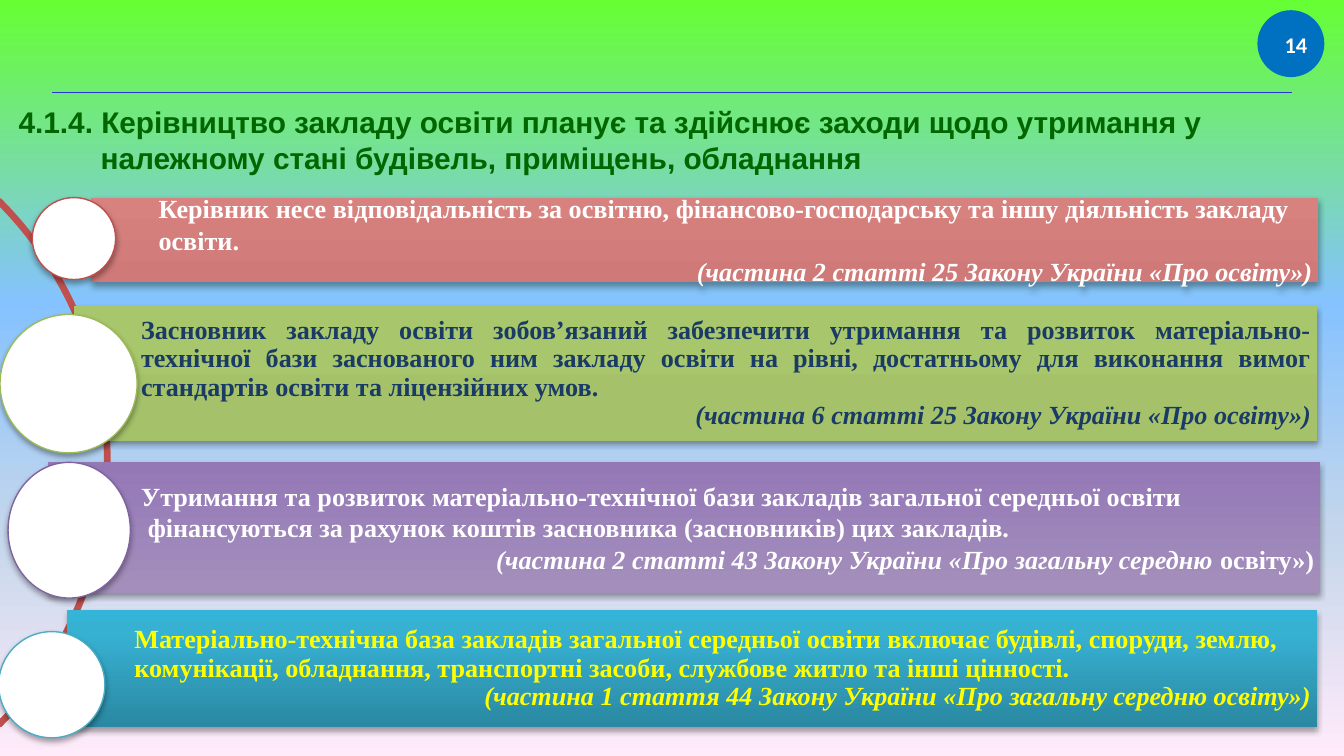
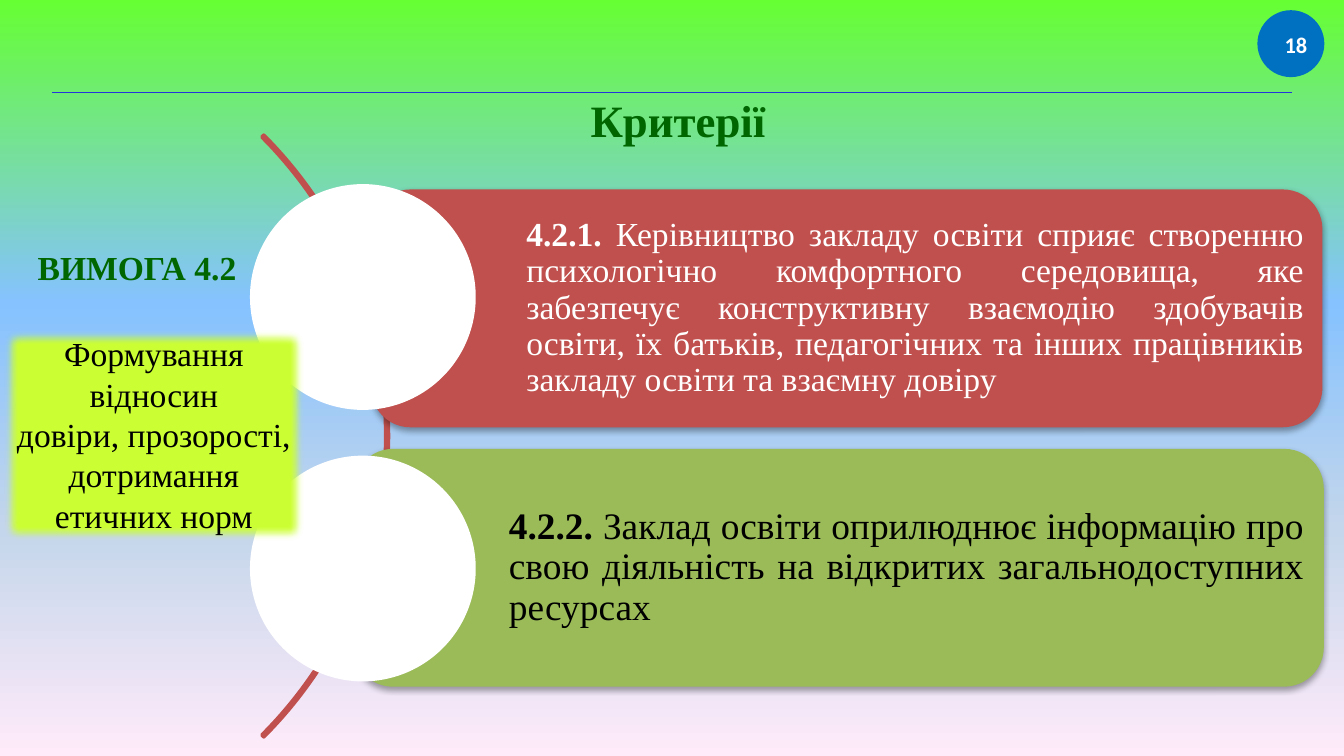
from dataclasses import dataclass

from lxml import etree
from pptx import Presentation
from pptx.dml.color import RGBColor
from pptx.enum.shapes import MSO_CONNECTOR, MSO_SHAPE
from pptx.enum.text import MSO_ANCHOR, MSO_AUTO_SIZE, PP_ALIGN
from pptx.oxml.ns import qn
from pptx.util import Emu, Pt

PX = 9144  # EMU in one px, 100 px to the inch
LEFT, CENTER, RIGHT, JUSTIFY = PP_ALIGN.LEFT, PP_ALIGN.CENTER, PP_ALIGN.RIGHT, PP_ALIGN.JUSTIFY
TOP, MIDDLE = MSO_ANCHOR.TOP, MSO_ANCHOR.MIDDLE
GROW = MSO_AUTO_SIZE.SHAPE_TO_FIT_TEXT
RECT, ROUNDED = MSO_SHAPE.RECTANGLE, MSO_SHAPE.ROUNDED_RECTANGLE
OVAL, ARC = MSO_SHAPE.OVAL, MSO_SHAPE.BLOCK_ARC
STRAIGHT = MSO_CONNECTOR.STRAIGHT

SERIF, SANS, NUMBER_FONT = "Times New Roman", "Arial", "Calibri"
WHITE, BLACK, YELLOW, NAVY = "FFFFFF", "000000", "FFFF00", "193B65"
HEADING, RED, GREEN, LIME = "006600", "C0504D", "9BBB59", "CCFF33"
BADGE, RULE = "0070C0", "2435DA"
SKY = [(0, "66FF33"), (40, "85C2FF"), (70, "C4D6EB"), (100, "FFEBFA")]


@dataclass
class Para:
    """A paragraph; a run is a string or a (string, bold, italic) triple."""
    runs: list
    align: int = LEFT
    italic: bool = False
    indent: int = 0


def rgb(value):
    return RGBColor.from_string(value)


def px(*lengths):
    return [Emu(length * PX) for length in lengths]


def add_xml(parent, tag, **attributes):
    return etree.SubElement(parent, qn(tag), attributes)


def paint_gradient(owner, fill, stops, angle):
    """Fill with any number of stops; the angle runs counter-clockwise."""
    fill.gradient()
    fill.gradient_angle = angle
    stop_list = owner._element.find(".//" + qn("a:gsLst"))
    for old in list(stop_list):
        stop_list.remove(old)
    for position, color in stops:
        stop = add_xml(stop_list, "a:gs", pos=str(position * 1000))
        add_xml(stop, "a:srgbClr", val=color)


class Deck:
    def __init__(self):
        self.prs = Presentation()
        self.prs.slide_width, self.prs.slide_height = Emu(1000 * PX), Emu(1125 * PX // 2)
        self.slide = None

    def new_slide(self, number):
        self.slide = self.prs.slides.add_slide(self.prs.slide_layouts[6])
        paint_gradient(self.slide, self.slide.background.fill, SKY, 270)
        self.rule(39, 69, 961)
        self.shape(OVAL, (937, 9, 47, 47), BADGE, (BADGE, 2))
        self.label((946, 18, 37, 30), [Para([number])], 12, WHITE,
                   font=NUMBER_FONT, bold=True, wrap=False)

    def rule(self, left, y, right):
        line = self.slide.shapes.add_connector(STRAIGHT, *px(left, y, right, y))
        line.line.color.rgb = rgb(RULE)
        line.line.width = Pt(0.75)
        add_xml(line._element.spPr, "a:effectLst")

    def shape(self, kind, box, fill=None, line=None, shadow=False):
        """Fill is a colour, a list of gradient stops or None; line is (colour, points)."""
        shape = self.slide.shapes.add_shape(kind, *px(*box))
        shape.shadow.inherit = False
        if fill is None:
            shape.fill.background()
        elif isinstance(fill, str):
            shape.fill.solid()
            shape.fill.fore_color.rgb = rgb(fill)
        else:
            paint_gradient(shape, shape.fill, fill, 90)
        if line:
            shape.line.color.rgb = rgb(line[0])
            shape.line.width = Pt(line[1])
        else:
            shape.line.fill.background()
        if shadow:
            outer = add_xml(self.effects(shape), "a:outerShdw", blurRad="40000", dist="23000",
                            dir="5400000", rotWithShape="0")
            color = add_xml(outer, "a:srgbClr", val=BLACK)
            add_xml(color, "a:alpha", val="35000")
        return shape

    def effects(self, shape):
        return shape._element.spPr.find(qn("a:effectLst"))

    def soften(self, shape, radius):
        add_xml(self.effects(shape), "a:softEdge", rad=str(radius * PX))

    def arc(self, box, thickness):
        arc = self.shape(ARC, box, line=(RED, 2))
        for index, value in enumerate((189, 27, thickness)):
            arc.adjustments[index] = value

    def label(self, box, paras, size, color, **style):
        textbox = self.slide.shapes.add_textbox(*px(*box))
        self.put_text(textbox, paras, size, color, grow=True, **style)

    def put_text(self, shape, paras, size, color, font=SERIF, bold=False, anchor=TOP,
                 insets=(10, 5, 10, 5), spacing=None, grow=False, wrap=True):
        frame = shape.text_frame
        frame.word_wrap = wrap
        frame.vertical_anchor = anchor
        if grow:
            frame.auto_size = GROW
        (frame.margin_left, frame.margin_top,
         frame.margin_right, frame.margin_bottom) = px(*insets)
        for index, para in enumerate(paras):
            paragraph = frame.add_paragraph() if index else frame.paragraphs[0]
            paragraph.alignment = para.align
            if spacing:
                paragraph.line_spacing = spacing
            if para.indent:
                paragraph._p.get_or_add_pPr().set("marL", str(para.indent * PX))
            face = paragraph.font
            face.name, face.size, face.bold, face.italic = font, Pt(size), bold, para.italic
            face.color.rgb = rgb(color)
            for part in para.runs:
                run = paragraph.add_run()
                if isinstance(part, str):
                    run.text = part
                else:
                    run.text, run.font.bold, run.font.italic = part

    def law_bar(self, box, stops, paras, color, spacing, circle, ring):
        bar = self.shape(RECT, box, stops, shadow=True)
        self.put_text(bar, paras, 14, color, bold=True, anchor=MIDDLE,
                      insets=(50, 4, 4, 4), spacing=spacing)
        self.shape(OVAL, circle, WHITE, (ring, 0.75), shadow=True)

    def criterion(self, box, fill, code, text, size, color, inset, circle_top):
        card = self.shape(ROUNDED, box, fill, shadow=True)
        para = Para([(code, True, False), text], JUSTIFY)
        self.put_text(card, [para], size, color, anchor=MIDDLE,
                      insets=(107, inset, inset, inset), spacing=0.9)
        self.shape(OVAL, (186, circle_top, 168, 168), WHITE)


LAW_BARS = [
    ((68, 147, 913, 63), [(0, "CF7A78"), (100, "D88280")], [
        Para(["Керівник несе відповідальність за освітню, фінансово-господарську "
              "та іншу діяльність закладу освіти."]),
        Para(["(частина 2 статті 25 Закону України «Про освіту»)"], RIGHT, True),
    ], WHITE, None, (24, 147, 62, 61), RED),
    ((55, 228, 925, 100), [(0, "A5C26A"), (100, "A8C66B")], [
        Para(["Засновник закладу освіти зобов’язаний забезпечити утримання та розвиток "
              "матеріально-технічної бази заснованого ним закладу освіти на рівні, "
              "достатньому для виконання вимог стандартів освіти та ліцензійних умов."],
             JUSTIFY),
        Para(["(частина 6 статті 25 Закону України «Про освіту»)"], RIGHT, True),
    ], NAVY, 0.9, (0, 234, 102, 103), GREEN),
    ((36, 344, 946, 97), [(0, "A48FBC"), (100, "9478B6")], [
        Para(["Утримання та розвиток матеріально-технічної бази закладів загальної "
              "середньої освіти"], JUSTIFY, indent=19),
        Para(["фінансуються за рахунок коштів засновника (засновників) цих закладів."],
             JUSTIFY, indent=24),
        Para(["(частина 2 статті 43 Закону України «Про загальну середню ",
              ("освіту»)", True, False)], RIGHT, True),
    ], WHITE, None, (6, 344, 91, 101), "8064A2"),
    ((50, 454, 930, 87), [(0, "2A88A2"), (80, "37B1D2"), (100, "34B4D6")], [
        Para(["Матеріально-технічна база закладів загальної середньої освіти включає "
              "будівлі, споруди, землю, комунікації, обладнання, транспортні засоби, "
              "службове житло та інші цінності."]),
        Para(["(частина 1 стаття 44 Закону України «Про загальну середню освіту»)"],
             RIGHT, True),
    ], YELLOW, 0.9, (-1, 470, 79, 79), "4BACC6"),
]

CRITERIA = [
    ((276, 141, 708, 177), RED, "4.2.1.",
     " Керівництво закладу освіти сприяє створенню психологічно комфортного середовища, "
     "яке забезпечує конструктивну взаємодію здобувачів освіти, їх батьків, педагогічних "
     "та інших працівників закладу освіти та взаємну довіру", 18, WHITE, 5, 137),
    ((263, 334, 722, 177), GREEN, "4.2.2.",
     " Заклад освіти оприлюднює інформацію про свою діяльність на відкритих "
     "загальнодоступних ресурсах", 20, BLACK, 6, 339),
]


def build_maintenance(deck):
    deck.new_slide("14")
    deck.label((4, 72, 996, 64), [
        Para(["4.1.4. Керівництво закладу освіти планує та здійснює заходи щодо утримання у"]),
        Para(["належному стані будівель, приміщень, обладнання"], indent=61),
    ], 16, HEADING, font=SANS, bold=True)
    deck.arc((-472, 68, 553, 553), 0.004)
    for bar in LAW_BARS:
        deck.law_bar(*bar)


def build_criteria(deck):
    deck.new_slide("18")
    deck.label((17, 179, 170, 40), [Para(["ВИМОГА 4.2"], CENTER)], 18, HEADING,
               bold=True, wrap=False)
    deck.arc((-344, 8, 633, 633), 0.003)
    for criterion in CRITERIA:
        deck.criterion(*criterion)
    deck.label((423, 64, 163, 50), [Para(["Критерії"], CENTER)], 24, HEADING, bold=True)
    requirement = deck.shape(RECT, (0, 243, 229, 162), LIME)
    deck.soften(requirement, 7)
    deck.put_text(requirement, [
        Para(["Формування відносин"], CENTER),
        Para(["довіри, прозорості, дотримання етичних норм"], CENTER),
    ], 18, BLACK, grow=True)


def main():
    deck = Deck()
    build_maintenance(deck)
    build_criteria(deck)
    deck.prs.save("out.pptx")


if __name__ == "__main__":
    main()
